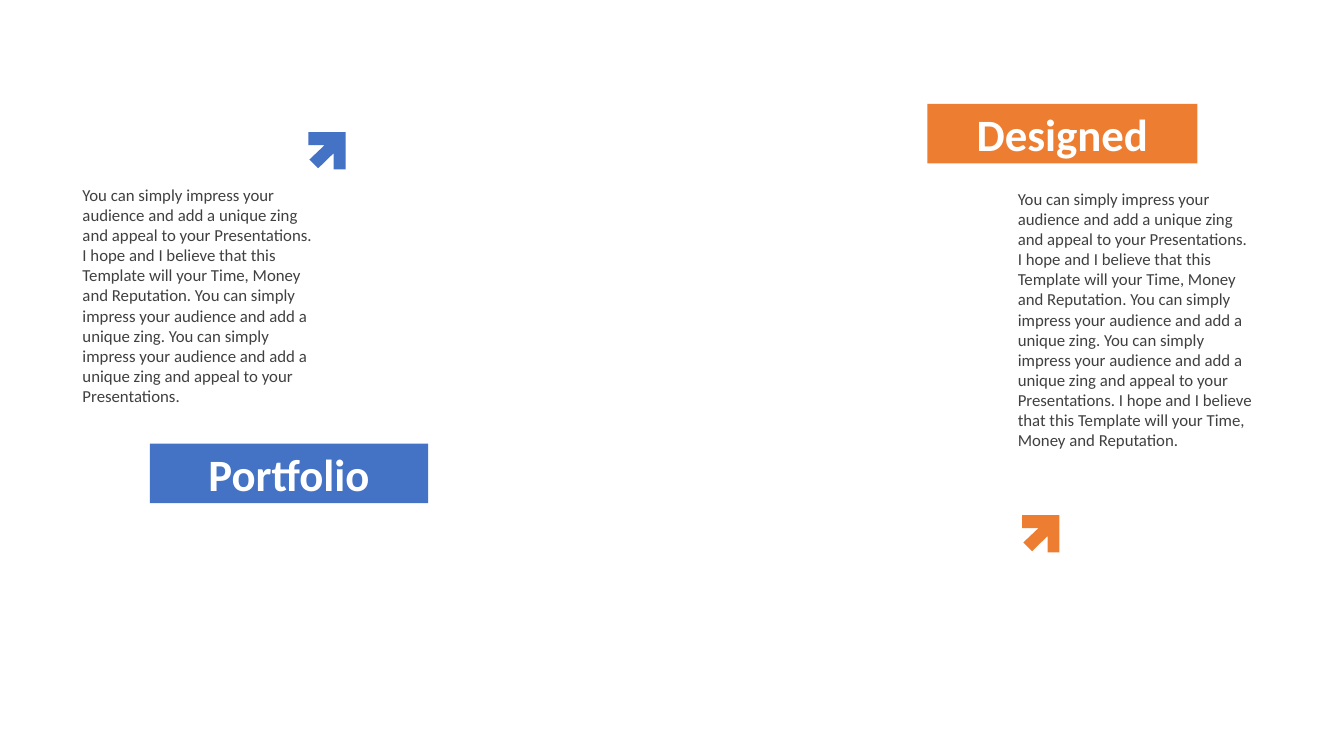
from pptx import Presentation
from pptx.dml.color import RGBColor
from pptx.enum.shapes import MSO_SHAPE
from pptx.enum.text import MSO_ANCHOR, MSO_AUTO_SIZE, PP_ALIGN
from pptx.util import Cm, Pt

COLORS = {"blue": "4472C4", "orange": "ED7D31", "body": "404040", "white": "FFFFFF"}
FONT = "Calibri"
ARROW_OUTLINE = [(0, 0), (94, 0), (94, 94), (64, 94), (64, 53),
                 (25, 91), (3, 69), (41, 33), (0, 33)]
PROMISE = ("I hope and I believe that this Template will your Time, "
           "Money and Reputation.")
APPEAL = ("You can simply impress your audience and add a unique zing "
          "and appeal to your Presentations.")
INTRO = (f"{APPEAL} {PROMISE} You can simply impress your audience and add "
         f"a unique zing. {APPEAL}")


def paint(shape, color):
    """Give a shape a flat fill without line or shadow."""
    shape.shadow.inherit = False
    shape.fill.solid()
    shape.fill.fore_color.rgb = RGBColor.from_string(COLORS[color])
    shape.line.fill.background()


def style(paragraph, size, color, bold=False):
    """Set the font of a paragraph."""
    font = paragraph.font
    font.name, font.size, font.bold = FONT, Pt(size), bold
    font.color.rgb = RGBColor.from_string(COLORS[color])


def add_banner(slide, left, top, width, heading, color):
    """Place a coloured banner with a centred heading."""
    banner = slide.shapes.add_shape(
        MSO_SHAPE.RECTANGLE, Cm(left), Cm(top), Cm(width), Cm(1.5))
    paint(banner, color)
    banner.text_frame.vertical_anchor = MSO_ANCHOR.MIDDLE
    paragraph = banner.text_frame.paragraphs[0]
    paragraph.text = heading
    paragraph.alignment = PP_ALIGN.CENTER
    style(paragraph, 32, "white", bold=True)


def add_arrow(slide, left, top, color):
    """Draw an arrow pointing up and to the right."""
    outline = slide.shapes.build_freeform(*ARROW_OUTLINE[0], scale=Cm(0.01))
    outline.add_line_segments(ARROW_OUTLINE[1:], close=True)
    paint(outline.convert_to_shape(Cm(left), Cm(top)), color)


def add_description(slide, left, top, height, text):
    """Place a wrapped block of body text."""
    description = slide.shapes.add_textbox(Cm(left), Cm(top), Cm(6.43), Cm(height))
    frame = description.text_frame
    frame.word_wrap = True
    frame.auto_size = MSO_AUTO_SIZE.SHAPE_TO_FIT_TEXT
    frame.paragraphs[0].text = text
    style(frame.paragraphs[0], 12, "body")


def add_portfolio(slide, left, top, width):
    """Build the blue panel: arrow, description, then banner."""
    add_banner(slide, left + 1.95, top + 7.85, width - 1.95, "Portfolio", "blue")
    add_arrow(slide, left + 5.94, top, "blue")
    add_description(slide, left, top + 1.19, 6.4, INTRO)


def add_designed(slide, left, top, width):
    """Build the orange panel: banner, description, then arrow."""
    add_banner(slide, left, top, width - 1.65, "Designed", "orange")
    add_arrow(slide, left + 2.39, top + 10.36, "orange")
    add_description(slide, left + 2.03, top + 2, 7.95, f"{INTRO} {PROMISE}")


def main():
    """Create the slide and save it."""
    presentation = Presentation()
    presentation.slide_width, presentation.slide_height = Cm(33.87), Cm(19.05)
    slide = presentation.slides.add_slide(presentation.slide_layouts[6])
    add_portfolio(slide, 1.83, 3.33, 8.96)
    add_designed(slide, 23.37, 2.62, 8.46)
    presentation.save("out.pptx")


if __name__ == "__main__":
    main()
